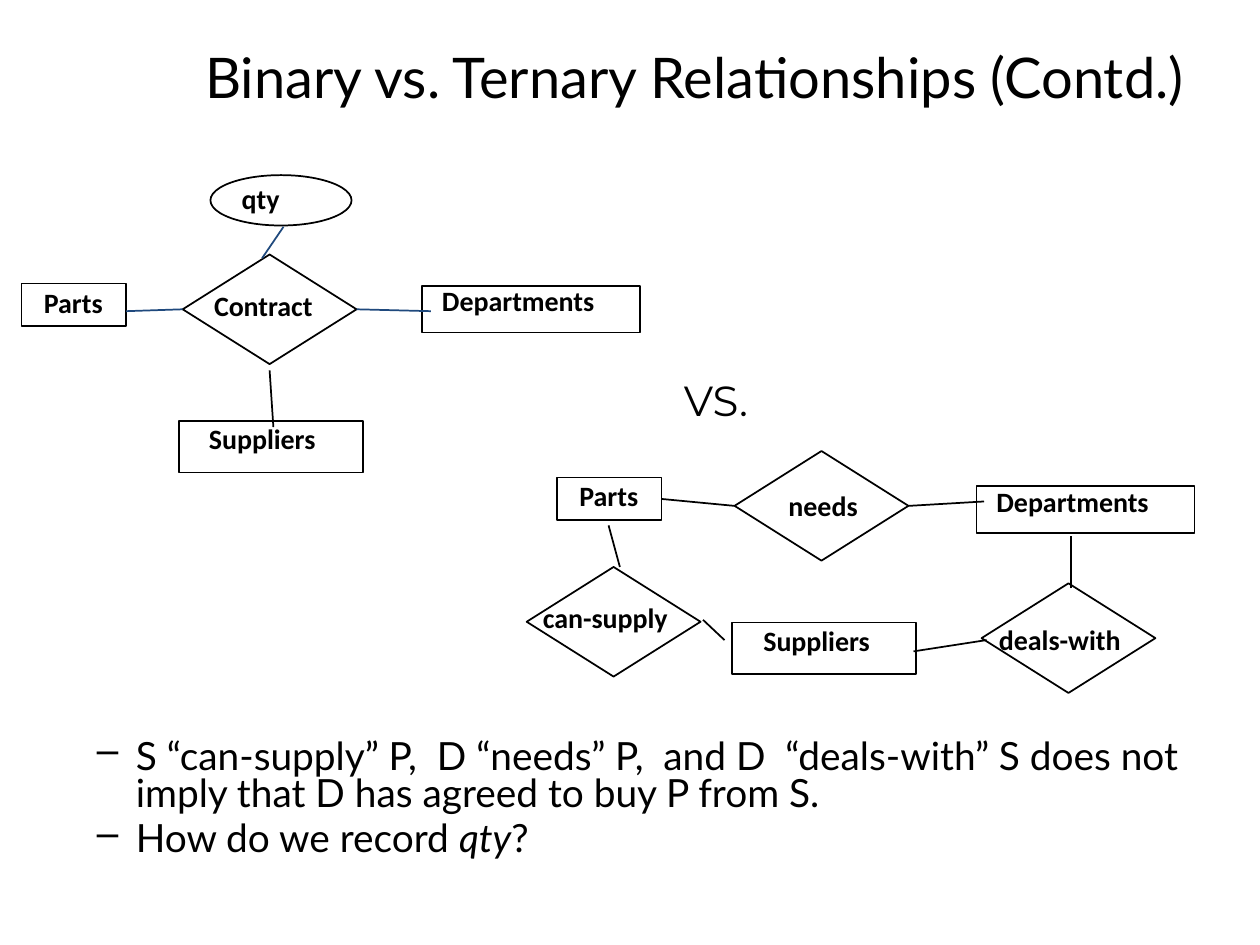
from lxml import etree
from pptx import Presentation, util as u
from pptx.dml.color import RGBColor
from pptx.enum import shapes, text
from pptx.oxml.ns import qn

BLACK, BLUE = "000000", "1F497D"

presentation = Presentation()
presentation.slide_width, presentation.slide_height = u.Inches(10), u.Inches(7.5)
slide = presentation.slides.add_slide(presentation.slide_layouts[6])
# A grid of 10 columns by 7.5 rows
column = presentation.slide_width / 10
row = presentation.slide_height / 7.5


def colour(hex_string):
    return RGBColor.from_string(hex_string)


def write(paragraphs, left, top, width, height, size, font, bold=False, wrap=True,
          align=text.PP_ALIGN.LEFT, anchor=text.MSO_ANCHOR.TOP):
    """Add a text box; each paragraph is a list of (words, italic) runs."""
    box = slide.shapes.add_textbox(int(left * column), int(top * row),
                                   int(width * column), int(height * row))
    frame = box.text_frame
    frame.word_wrap = wrap
    frame.vertical_anchor = anchor
    for number, runs in enumerate(paragraphs):
        paragraph = frame.add_paragraph() if number else frame.paragraphs[0]
        paragraph.alignment = align
        for words, italic in runs:
            run = paragraph.add_run()
            run.text = words
            run.font.name, run.font.size = font, u.Pt(size)
            run.font.bold, run.font.italic = bold, italic
            run.font.color.rgb = colour(BLACK)
    return box


write([[("Binary vs. Ternary Relationships (Contd.)", False)]], 1.28, 0, 8.47, 1.21,
      size=32, font="Lato", align=text.PP_ALIGN.CENTER, anchor=text.MSO_ANCHOR.MIDDLE)

# Entities and relationships: label, left, top, label offset, label width
kind = shapes.MSO_SHAPE
nodes = {
    (kind.OVAL, 1.12, 0.40): [("qty", 1.67, 1.39, 0.15, 0, 0.53)],
    (kind.RECTANGLE, 0.83, 0.34): [("Parts", 0.17, 2.25, 0.08, -0.03, 0.75),
                                   ("Parts", 4.42, 3.79, 0.08, -0.04, 0.75)],
    (kind.RECTANGLE, 1.73, 0.37): [("Departments", 3.35, 2.27, 0.06, -0.07, 1.56),
                                   ("Departments", 7.75, 3.86, 0.06, -0.06, 1.56)],
    (kind.RECTANGLE, 1.46, 0.41): [("Suppliers", 1.42, 3.34, 0.14, -0.04, 1.21),
                                   ("Suppliers", 5.81, 4.94, 0.15, -0.04, 1.21)],
    (kind.DIAMOND, 1.38, 0.87): [("Contract", 1.45, 2.02, 0.15, 0.22, 1.11),
                                 ("needs", 5.83, 3.58, 0.33, 0.25, 0.84),
                                 ("can-supply", 4.18, 4.50, 0.03, 0.22, 1.37),
                                 ("deals-with", 7.79, 4.63, 0.04, 0.26, 1.28)],
}
placed = {}  # the latest shape with each label, so "Parts" is the lower one
for (preset, width, height), members in nodes.items():
    for label, left, top, shift_x, shift_y, label_width in members:
        shape = slide.shapes.add_shape(preset, int(left * column), int(top * row),
                                       int(width * column), int(height * row))
        shape.shadow.inherit = False
        shape.fill.background()
        shape.line.color.rgb = colour(BLACK)
        shape.line.width = u.Pt(1)
        placed[label] = shape
        box = write([[(label, False)]], left + shift_x, top + shift_y, label_width, 0.36,
                    size=16, font="Calibri", bold=True, wrap=False)
        box.text_frame.auto_size = text.MSO_AUTO_SIZE.SHAPE_TO_FIT_TEXT

# Lines: from x, y, to x, y, colour, joined start, joined end (label, side)
links = [
    (2.83, 2.46, 3.42, 2.47, BLUE, ("Contract", 3), None),
    (2.25, 1.80, 2.08, 2.05, BLUE, None, None),
    (1.45, 2.46, 1.00, 2.47, BLUE, ("Contract", 1), None),
    (2.14, 2.94, 2.17, 3.39, BLACK, None, None),
    (4.83, 4.17, 4.92, 4.50, BLACK, None, None),
    (5.58, 4.92, 5.75, 5.08, BLACK, None, None),
    (7.25, 5.17, 7.83, 5.08, BLACK, None, None),
    (8.50, 4.67, 8.50, 4.25, BLACK, None, None),
    (5.25, 3.93, 5.83, 4.02, BLACK, ("Parts", 3), ("needs", 1)),
    (7.21, 4.02, 7.81, 3.98, BLACK, ("needs", 3), None),
]
for x1, y1, x2, y2, line_colour, start, end in links:
    connector = slide.shapes.add_connector(
        shapes.MSO_CONNECTOR.STRAIGHT, int(x1 * column), int(y1 * row),
        int(x2 * column), int(y2 * row))
    connector.line.color.rgb = colour(line_colour)
    connector.line.width = u.Pt(1)
    etree.SubElement(connector._element.spPr, qn("a:effectLst"))
    if start:
        connector.begin_connect(placed[start[0]], start[1])
    if end:
        connector.end_connect(placed[end[0]], end[1])

write([[("VS.", False)]], 5.33, 2.92, 1, 0.57, size=24, font="Montserrat")

notes = write([
    [("S “can-supply” P,  D “needs” P,  and D  “deals-with” S does not "
      "imply that D has agreed to buy P from S.", False)],
    [("How do we record ", False), ("qty", True), ("?", False)],
], 0.17, 5.83, 9.83, 1.08, size=22.2, font="Lato")
for paragraph in notes.text_frame.paragraphs:
    paragraph.line_spacing = 0.8
    paragraph.space_before = u.Pt(4.4)
    properties = paragraph._p.get_or_add_pPr()
    properties.set("marL", str(u.Inches(0.81)))
    properties.set("indent", str(u.Inches(-0.31)))
    etree.SubElement(properties, qn("a:buChar"), char="–")

presentation.save("out.pptx")
